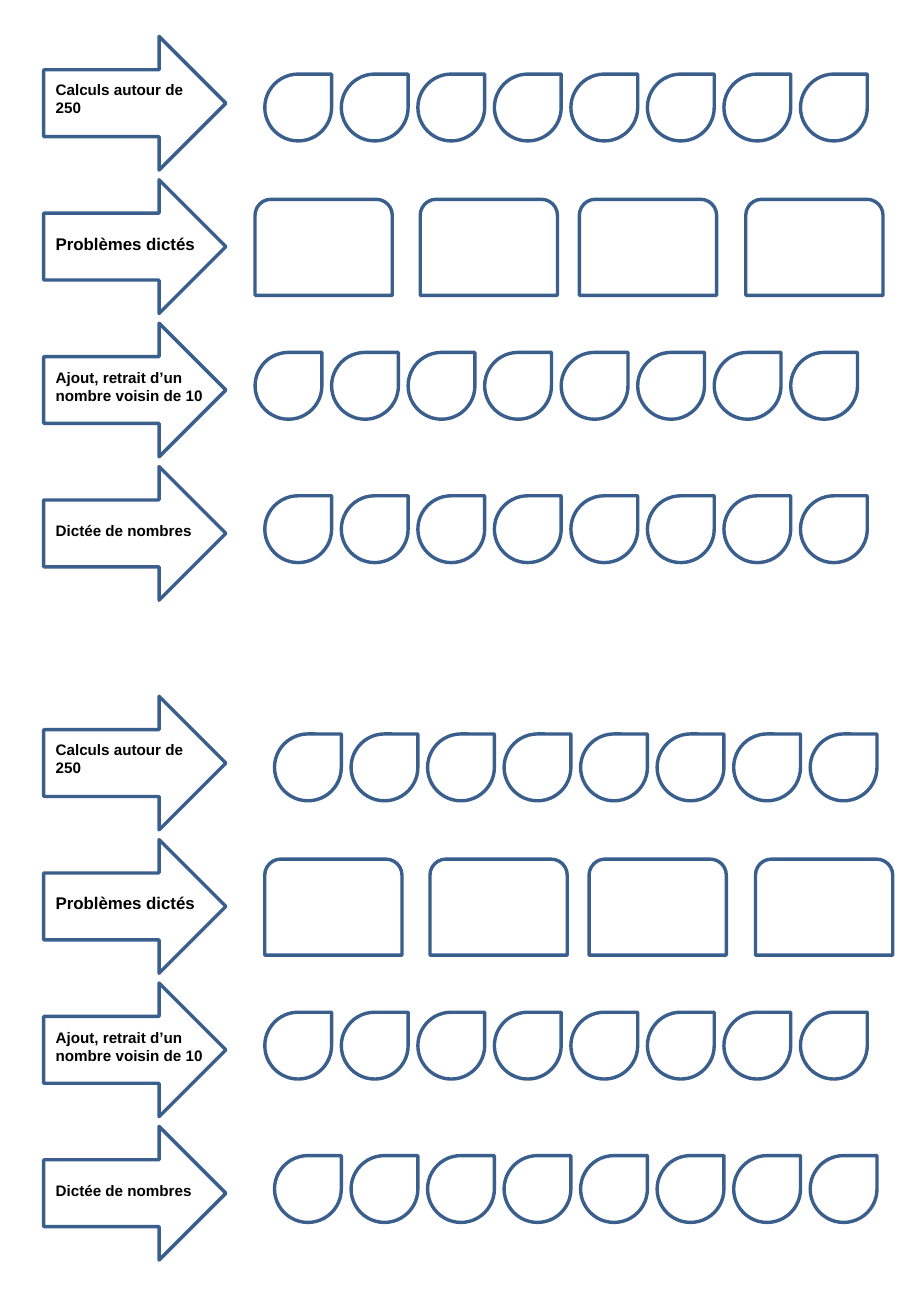
"""Builds a mental arithmetic answer sheet, printed twice on one page."""
from pptx import Presentation
from pptx.dml.color import RGBColor
from pptx.enum.shapes import MSO_SHAPE
from pptx.enum.text import MSO_AUTO_SIZE
from pptx.util import Inches, Pt

ARROW = MSO_SHAPE.RIGHT_ARROW
DROP = MSO_SHAPE.TEAR
CARD = MSO_SHAPE.ROUND_2_SAME_RECTANGLE
FIT_SHAPE = MSO_AUTO_SIZE.SHAPE_TO_FIT_TEXT

COLORS = {"outline": "3A5F8C", "text": "000000"}
DROP_OFFSETS = [0.63 * index for index in range(8)]
CARD_OFFSETS = [0, 1.36, 2.67, 4.04]
DROP_SIZE = (0.55, 0.55)
CARD_SIZE = (1.13, 0.79)

EXERCISES = [
    {"label": "Calculs autour de 250", "size": 9, "label_box": (0.61, 1.42, 0.4),
     "answer": DROP, "answer_size": DROP_SIZE, "offsets": DROP_OFFSETS, "start": (2.18, 0.61)},
    {"label": "Problèmes dictés", "size": 10, "label_box": (1.87, 1.5, 0.27),
     "answer": CARD, "answer_size": CARD_SIZE, "offsets": CARD_OFFSETS, "start": (2.1, 1.64)},
    {"label": "Ajout, retrait d’un nombre voisin de 10", "size": 9, "label_box": (2.98, 1.42, 0.4),
     "answer": DROP, "answer_size": DROP_SIZE, "offsets": DROP_OFFSETS, "start": (2.1, 2.9)},
    {"label": "Dictée de nombres", "size": 9, "label_box": (4.24, 1.42, 0.25),
     "answer": DROP, "answer_size": DROP_SIZE, "offsets": DROP_OFFSETS, "start": (2.18, 4.08)},
]

SHEET_SHIFTS = [(0, 0), (0.08, 5.43)]
LEFT = 0.36
ARROW_TOP, ARROW_PITCH = 0.3, 1.18
ARROW_SIZE = (1.5, 1.1)


def add_outline(slide, kind, left, top, size):
    shape = slide.shapes.add_shape(kind, Inches(left), Inches(top), *map(Inches, size))
    shape.shadow.inherit = False
    shape.fill.background()
    shape.line.color.rgb = RGBColor.from_string(COLORS["outline"])
    shape.line.width = Pt(2)


def add_label(slide, exercise, shift):
    top, width, height = exercise["label_box"]
    box = slide.shapes.add_textbox(
        Inches(LEFT), Inches(top + shift), Inches(width), Inches(height))
    frame = box.text_frame
    frame.word_wrap = True
    frame.auto_size = FIT_SHAPE
    paragraph = frame.paragraphs[0]
    paragraph.text = exercise["label"]
    paragraph.font.name = "Arial"
    paragraph.font.size = Pt(exercise["size"])
    paragraph.font.bold = True
    paragraph.font.color.rgb = RGBColor.from_string(COLORS["text"])


def add_sheet(slide, shift_right, shift_down):
    for row, exercise in enumerate(EXERCISES):
        arrow_top = ARROW_TOP + row * ARROW_PITCH + shift_down
        add_outline(slide, ARROW, LEFT, arrow_top, ARROW_SIZE)
        add_label(slide, exercise, shift_down)
        left, top = exercise["start"]
        for offset in exercise["offsets"]:
            add_outline(slide, exercise["answer"], left + shift_right + offset,
                        top + shift_down, exercise["answer_size"])


def main():
    presentation = Presentation()
    presentation.slide_width = Inches(7.5)
    presentation.slide_height = Inches(10.83)
    slide = presentation.slides.add_slide(presentation.slide_layouts[6])
    for shift_right, shift_down in SHEET_SHIFTS:
        add_sheet(slide, shift_right, shift_down)
    presentation.save("out.pptx")


if __name__ == "__main__":
    main()
